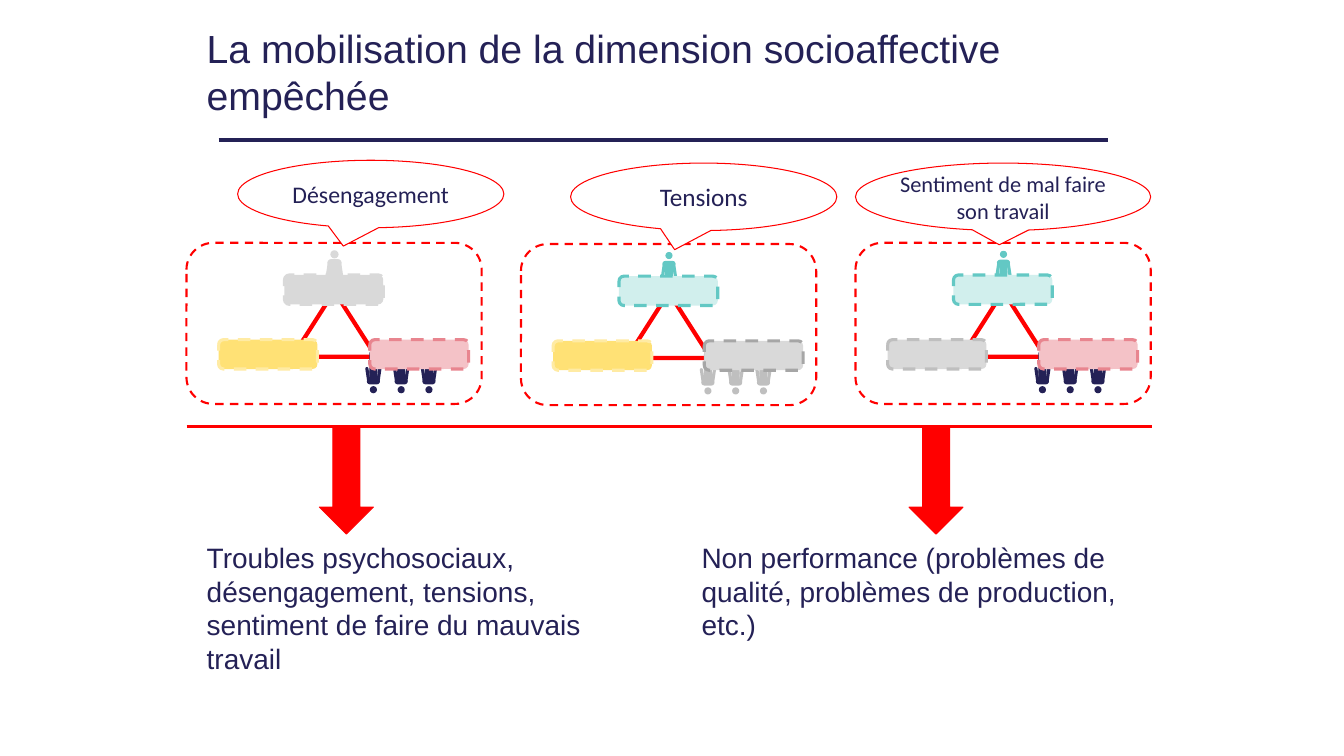
"""Slide on the blocked socio-affective dimension: three situations and two outcomes."""
from pptx import Presentation, util as u
from pptx.dml.color import RGBColor
from pptx.enum import dml, shapes, text
from pptx.oxml.xmlchemy import OxmlElement

NAVY = RGBColor(0x24, 0x21, 0x56)
RED = RGBColor(0xFF, 0x00, 0x00)
WHITE = RGBColor(0xFF, 0xFF, 0xFF)
TEAL = RGBColor(0x63, 0xC8, 0xC4)
PALE_TEAL = RGBColor(0xD1, 0xEF, 0xED)
YELLOW = RGBColor(0xFF, 0xE1, 0x75)
PALE_YELLOW = RGBColor(0xFF, 0xEB, 0xA4)
PINK = RGBColor(0xF4, 0xC2, 0xC7)
ROSE = RGBColor(0xE8, 0x85, 0x8F)
LIGHT_GREY = RGBColor(0xD9, 0xD9, 0xD9)
MID_GREY = RGBColor(0xBF, 0xBF, 0xBF)
DARK_GREY = RGBColor(0xA6, 0xA6, 0xA6)
KIND = shapes.MSO_SHAPE

deck = Presentation()
deck.slide_width, deck.slide_height = u.Cm(33.87), u.Cm(19.05)
page = deck.slides.add_slide(deck.slide_layouts[6])


def draw(kind, left, top, width, height, fill=None, line=None, weight=0.75, dashed=False):
    shape = page.shapes.add_shape(kind, u.Cm(left), u.Cm(top), u.Cm(width), u.Cm(height))
    shape.shadow.inherit = False
    if fill is None:
        shape.fill.background()
    else:
        shape.fill.solid()
        shape.fill.fore_color.rgb = fill
    if line is None:
        shape.line.fill.background()
    else:
        shape.line.color.rgb = line
        shape.line.width = u.Pt(weight)
    if dashed:
        shape.line.dash_style = dml.MSO_LINE.DASH
    return shape


def write(box, words, *, size, font="Arial", align=text.PP_ALIGN.LEFT,
          anchor=text.MSO_ANCHOR.TOP, inset=0.13, before=0):
    frame = box.text_frame
    frame.word_wrap = True
    frame.vertical_anchor = anchor
    frame.margin_left = frame.margin_right = u.Cm(inset)
    frame.margin_top = frame.margin_bottom = u.Cm(inset)
    para = frame.paragraphs[0]
    para.alignment = align
    para.space_before = u.Pt(before)
    span = para.add_run()
    span.text = words
    span.font.name, span.font.size = font, u.Pt(size)
    span.font.color.rgb = NAVY


title = page.shapes.add_textbox(u.Cm(5.08), u.Cm(0.48), u.Cm(22.86), u.Cm(2.64))
write(title, "La mobilisation de la dimension socioaffective empêchée",
      size=28, anchor=text.MSO_ANCHOR.MIDDLE)

# name: centre offset from the figure's axis and head top, size, tilt
FIGURE = [
    (KIND.OVAL, 0, 0.09, 0.18, 0.18, 0),
    (KIND.ROUNDED_RECTANGLE, -0.14, 0.46, 0.08, 0.41, 8.6),
    (KIND.ROUNDED_RECTANGLE, -0.05, 0.77, 0.1, 0.58, 0),
    (KIND.ROUNDED_RECTANGLE, 0.05, 0.77, 0.1, 0.58, 0),
    (KIND.ROUNDED_RECTANGLE, 0, 0.45, 0.2, 0.38, 0),
    (KIND.ROUNDED_RECTANGLE, 0, 0.3, 0.33, 0.15, 0),
    (KIND.ROUNDED_RECTANGLE, 0.14, 0.46, 0.08, 0.41, -8.6),
]
PANEL_LEFT, PANEL_TOP, PANEL_WIDTH, PANEL_PITCH = 4.7, 6.12, 7.44, 8.43

panels = [
    (0, LIGHT_GREY, LIGHT_GREY, (LIGHT_GREY, LIGHT_GREY), (YELLOW, PALE_YELLOW), NAVY, (PINK, ROSE)),
    (0.03, TEAL, None, (PALE_TEAL, TEAL), (YELLOW, PALE_YELLOW), MID_GREY, (LIGHT_GREY, DARK_GREY)),
    (0, TEAL, None, (PALE_TEAL, TEAL), (LIGHT_GREY, MID_GREY), NAVY, (PINK, ROSE)),
]
for index, (drop, leader, leader_line, top_card, left_card, workers, right_card) in enumerate(panels):
    left = PANEL_LEFT + index * PANEL_PITCH
    draw(KIND.ROUNDED_RECTANGLE, left, PANEL_TOP + drop, PANEL_WIDTH, 4.06,
         line=RED, weight=1.5, dashed=True)
    draw(KIND.ISOSCELES_TRIANGLE, left + 2.67, 7.34 + drop, 2.11, 1.65, line=RED, weight=3)

    people = [(3.73, 6.32, 1, leader, leader_line)]
    people += [(4.71 + 0.7 * place, 9.91, -1, workers, None) for place in range(3)]
    for axis, head, way, colour, outline in people:
        for kind, dx, dy, width, height, tilt in FIGURE:
            part = draw(kind, left + axis + way * dx - width / 2,
                        head + drop + way * dy - height / 2, width, height, colour, outline)
            part.rotation = tilt if way == 1 else 180 + tilt
            if kind == KIND.ROUNDED_RECTANGLE:
                part.adjustments[0] = 0.5

    cards = [(2.47, 6.93, top_card), (0.81, 8.56, left_card), (4.62, 8.56, right_card)]
    for dx, top, (fill, edge) in cards:
        draw(KIND.ROUNDED_RECTANGLE, left + dx, top + drop, 2.49, 0.74, fill, edge, 2.25, True)

outcomes = [
    (8.05, 5.08, 9.73, 3.68,
     "Troubles psychosociaux, désengagement, tensions, sentiment de faire du mauvais travail"),
    (22.91, 17.55, 11.76, 2.82,
     "Non performance (problèmes de qualité, problèmes de production, etc.)"),
]
for arrow_left, left, width, height, words in outcomes:
    draw(KIND.DOWN_ARROW, arrow_left, 10.74, 1.36, 2.72, RED, RED)
    outcome = page.shapes.add_textbox(u.Cm(left), u.Cm(13.49), u.Cm(width), u.Cm(height))
    write(outcome, words, size=20, before=4)

for start, end, top, colour, weight in [(5.51, 27.91, 3.53, NAVY, 3), (4.7, 29.03, 10.74, RED, 2)]:
    rule = page.shapes.add_connector(shapes.MSO_CONNECTOR.STRAIGHT,
                                     u.Cm(start), u.Cm(top), u.Cm(end), u.Cm(top))
    rule.line.color.rgb = colour
    rule.line.width = u.Pt(weight)
    rule._element.spPr.append(OxmlElement("a:effectLst"))

callouts = [
    (5.99, 4.04, 6.71, -0.103, 0.772, "Désengagement", 17, 0.13),
    (14.38, 4.11, 6.71, -0.109, 0.784, "Tensions", 18, 0.13),
    (21.56, 4.11, 7.44, -0.013, 0.711, "Sentiment de mal faire son travail", 16, 0),
]
for left, top, width, tip_x, tip_y, words, size, inset in callouts:
    callout = draw(KIND.OVAL_CALLOUT, left, top, width, 1.7, WHITE, RED)
    callout.adjustments[0], callout.adjustments[1] = tip_x, tip_y
    write(callout, words, size=size, font="Calibri", align=text.PP_ALIGN.CENTER,
          anchor=text.MSO_ANCHOR.MIDDLE, inset=inset)

deck.save("out.pptx")
